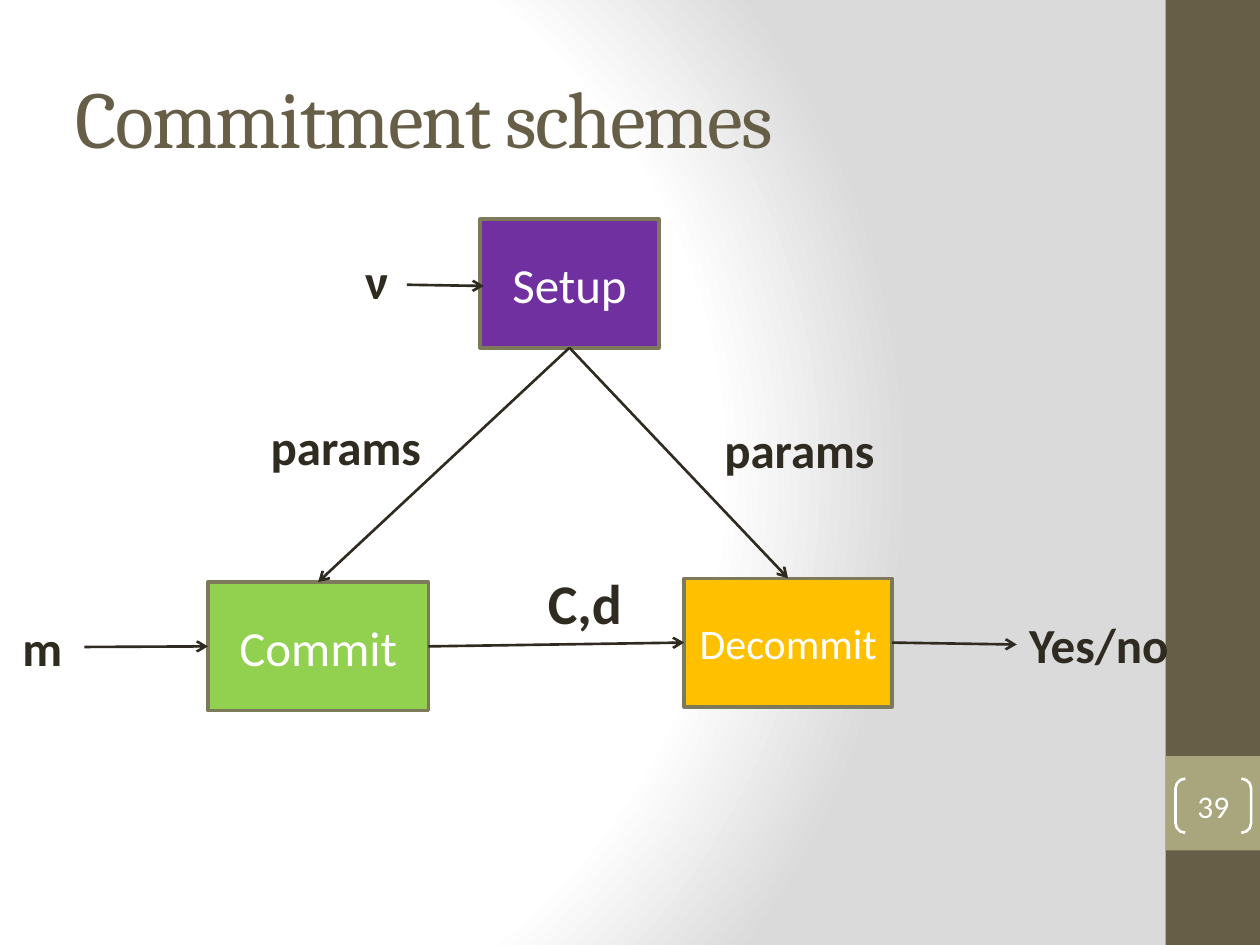
from pptx import Presentation
from pptx.dml.color import RGBColor
from pptx.enum.shapes import MSO_CONNECTOR, MSO_SHAPE as Shape
from pptx.enum.text import MSO_ANCHOR as Anchor, MSO_AUTO_SIZE as AutoSize, PP_ALIGN as Align
from pptx.oxml import parse_xml
from pptx.oxml.ns import nsdecls, qn
from pptx.util import Inches, Pt

BROWN = RGBColor(0x67, 0x5E, 0x47)
OLIVE = RGBColor(0xA9, 0xA5, 0x7C)
OUTLINE = RGBColor(0x7D, 0x7A, 0x5C)
INK = RGBColor(0x2F, 0x2B, 0x20)
WHITE = RGBColor(0xFF, 0xFF, 0xFF)
GREY = RGBColor(0xDA, 0xDA, 0xDA)
GREEN = RGBColor(0x92, 0xD0, 0x50)
AMBER = RGBColor(0xFF, 0xC0, 0x00)
PURPLE = RGBColor(0x70, 0x30, 0xA0)

TOP, LEFT, BOTTOM, RIGHT = range(4)  # connection sites of a rectangle


def write(shape, words, align=Align.LEFT, anchor=Anchor.TOP, **font):
    frame = shape.text_frame
    frame.vertical_anchor = anchor
    paragraph = frame.paragraphs[0]
    paragraph.alignment = align
    run = paragraph.add_run()
    run.text = words
    look = {"name": "Calibri", "size": Pt(28), **font}
    run.font.color.rgb = look.pop("color", INK)
    for key, value in look.items():
        setattr(run.font, key, value)
    return run


def add_block(slide, box, fill=None, line=None, width=2, kind=Shape.RECTANGLE):
    block = slide.shapes.add_shape(kind, *map(Inches, box))
    block.shadow.inherit = False
    if fill is None:
        block.fill.background()
    else:
        block.fill.solid()
        block.fill.fore_color.rgb = fill
    if line is None:
        block.line.fill.background()
    else:
        block.line.color.rgb = line
        block.line.width = Pt(width)
    return block


def add_step(slide, box, name, fill, size=28):
    step = add_block(slide, box, fill, OUTLINE)
    write(step, name, Align.CENTER, Anchor.MIDDLE, size=Pt(size), color=WHITE)
    return step


def add_label(slide, box, words, size=28):
    label = slide.shapes.add_textbox(*map(Inches, box))
    label.text_frame.word_wrap = False
    label.text_frame.auto_size = AutoSize.SHAPE_TO_FIT_TEXT
    write(label, words, size=Pt(size), bold=True)
    return label


def add_arrow(slide, start=(0, 0), end=(0, 0)):
    arrow = slide.shapes.add_connector(
        MSO_CONNECTOR.STRAIGHT, *map(Inches, (*start, *end)))
    arrow.line.color.rgb = INK
    arrow.line.width = Pt(1.5)
    arrow.line._get_or_add_ln().append(
        parse_xml(f'<a:tailEnd {nsdecls("a")} type="arrow"/>'))
    arrow._element.spPr.append(parse_xml(f'<a:effectLst {nsdecls("a")}/>'))
    return arrow


def link(slide, source, source_site, target, target_site):
    arrow = add_arrow(slide)
    arrow.begin_connect(source, source_site)
    arrow.end_connect(target, target_site)


def paint_background(slide):
    slide.background.fill.gradient()
    gradient = slide.element.find(".//" + qn("a:gradFill"))
    stops = "".join(
        f'<a:gs pos="{percent * 1000}"><a:srgbClr val="{color}"/></a:gs>'
        for percent, color in ((0, WHITE), (75, WHITE), (100, GREY)))
    gradient.getparent().replace(gradient, parse_xml(
        f'<a:gradFill {nsdecls("a")} rotWithShape="1"><a:gsLst>{stops}</a:gsLst>'
        '<a:path path="circle">'
        '<a:fillToRect l="20000" t="50000" r="100000" b="50000"/>'
        '</a:path></a:gradFill>'))


def add_sidebar(slide, box, number):
    left, top, width, height = box
    add_block(slide, box, BROWN)
    add_block(slide, (left, top + 6, width, width), OLIVE)
    # Bracketed page number
    page = add_block(slide, (left + 0.08, top + 6.18, 0.6, 0.43),
                     line=WHITE, width=1.5, kind=Shape.DOUBLE_BRACKET)
    page.adjustments[0] = 0.18
    for side in ("left", "top", "right", "bottom"):
        setattr(page.text_frame, f"margin_{side}", 0)
    write(page, number, Align.CENTER, Anchor.MIDDLE, size=Pt(18), color=WHITE)


def add_title(slide, box, words):
    title = slide.shapes.add_textbox(*map(Inches, box))
    title.text_frame.word_wrap = True
    run = write(title, words, anchor=Anchor.MIDDLE,
                name="Cambria", size=Pt(46), color=BROWN)
    run.font._element.set("spc", "-100")


def add_scheme(slide, box):
    left, top = box[:2]

    def at(x, y, *size):
        return (left + x, top + y, *size)

    # Algorithms
    setup = add_step(slide, at(3.73, 0, 1.42, 1.02), "Setup", PURPLE)
    commit = add_step(slide, at(1.57, 2.88, 1.75, 1.02), "Commit", GREEN)
    decommit = add_step(slide, at(5.35, 2.85, 1.65, 1.02), "Decommit", AMBER, 24)

    # Inputs, outputs and messages
    message = add_label(slide, at(0, 3.11, 0.59, 0.57), "m")
    verdict = add_label(slide, at(7.99, 3.09, 1.34, 0.57), "Yes/no")
    add_label(slide, at(2.72, 0.2, 0.59, 0.57), "ν")
    add_label(slide, at(4.17, 2.72, 1.02, 0.64), "C,d", 32)
    for x, y in ((1.97, 1.52), (5.57, 1.54)):
        add_label(slide, at(x, y, 1.43, 0.57), "params")

    # Flow
    add_arrow(slide, at(3.15, 0.52), at(3.76, 0.53))
    link(slide, setup, BOTTOM, commit, TOP)
    link(slide, setup, BOTTOM, decommit, TOP)
    link(slide, message, RIGHT, commit, LEFT)
    link(slide, commit, RIGHT, decommit, LEFT)
    link(slide, decommit, RIGHT, verdict, LEFT)


def main():
    deck = Presentation()
    deck.slide_width, deck.slide_height = Inches(10), Inches(7.5)
    slide = deck.slides.add_slide(deck.slide_layouts[6])
    paint_background(slide)
    add_sidebar(slide, (9.25, 0, 0.75, 7.5), "39")
    add_title(slide, (0.5, 0.3, 8.33, 1.25), "Commitment schemes")
    add_scheme(slide, (0.08, 1.74, 9.33, 3.9))
    deck.save("out.pptx")


if __name__ == "__main__":
    main()
